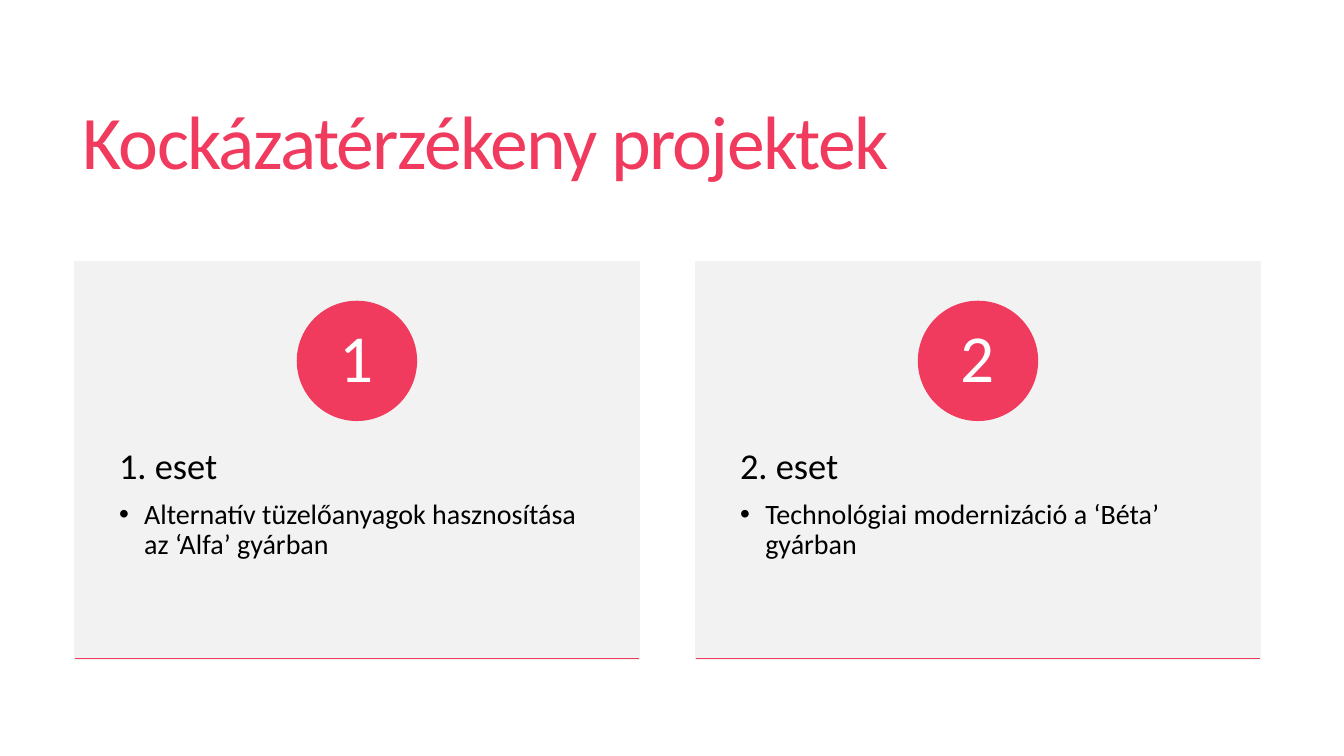
from lxml import etree
from pptx import Presentation
from pptx.dml.color import RGBColor
from pptx.enum.shapes import MSO_CONNECTOR, MSO_SHAPE
from pptx.enum.text import MSO_ANCHOR, MSO_AUTO_SIZE, PP_ALIGN
from pptx.oxml.ns import qn
from pptx.util import Inches, Pt

RECT, OVAL = MSO_SHAPE.RECTANGLE, MSO_SHAPE.OVAL
LINE = MSO_CONNECTOR.STRAIGHT
MIDDLE, TOP = MSO_ANCHOR.MIDDLE, MSO_ANCHOR.TOP
LEFT, CENTER = PP_ALIGN.LEFT, PP_ALIGN.CENTER
FONT, PINK, GREY, BLACK, WHITE = "Calibri", "F03B5E", "F2F2F2", "000000", "FFFFFF"

# Card grid: two columns sharing one row
X0, PITCH, WIDE = 0.74, 6.16, 5.6
Y0, HIGH = 2.6, 3.94
DISC = 1.18

CASES = [
    ("1", "1. eset", "Alternatív tüzelőanyagok hasznosítása az ‘Alfa’ gyárban"),
    ("2", "2. eset", "Technológiai modernizáció a ‘Béta’ gyárban"),
]


def color(code):
    return RGBColor.from_string(code)


def place(shape, x, y, w, h):
    shape.left, shape.top = Inches(x), Inches(y)
    shape.width, shape.height = Inches(w), Inches(h)


def setup(frame, anchor, side, edge):
    frame.word_wrap = True
    frame.auto_size = MSO_AUTO_SIZE.NONE
    frame.vertical_anchor = anchor
    frame.margin_left = frame.margin_right = Inches(side)
    frame.margin_top = frame.margin_bottom = Inches(edge)


def write(para, text, size, code, align=LEFT, lead=0.9, after=0):
    para.alignment = align
    para.line_spacing = lead
    para.space_before, para.space_after = Pt(0), Pt(after)
    run = para.add_run()
    run.text = text
    run.font.name, run.font.size = FONT, Pt(size)
    run.font.color.rgb = color(code)
    return run


def indent(para, hang, mark=None):
    props = para._p.get_or_add_pPr()
    props.set("marL", str(Inches(hang)))
    props.set("indent", str(-Inches(hang)))
    if mark:
        etree.SubElement(props, qn("a:buFont")).set("typeface", "Arial")
        etree.SubElement(props, qn("a:buChar")).set("char", mark)
    else:
        etree.SubElement(props, qn("a:buNone"))


def solid(slide, kind, x, y, w, h, code):
    shape = slide.shapes.add_shape(kind, Inches(x), Inches(y), Inches(w), Inches(h))
    shape.shadow.inherit = False
    shape.fill.solid()
    shape.fill.fore_color.rgb = shape.line.color.rgb = color(code)
    shape.line.width = Pt(1)
    return shape


def rule(slide, x, y, w):
    line = slide.shapes.add_connector(
        LINE, Inches(x), Inches(y), Inches(x + w), Inches(y))
    line.line.color.rgb = color(PINK)
    line.line.width = Pt(1)
    etree.SubElement(line._element.spPr, qn("a:effectLst"))


def head(slide, text):
    title = slide.shapes.title
    place(title, 0.72, 0.55, 11.78, 1.81)
    setup(title.text_frame, MIDDLE, 0.1, 0.05)
    run = write(title.text_frame.paragraphs[0], text, 54, PINK, lead=0.85)
    run.font._element.set("spc", "-120")


def card(slide, body, x, num, name, text):
    # Panel, sent behind the body placeholder
    panel = solid(slide, RECT, x, Y0, WIDE, HIGH, GREY)
    slide.shapes._spTree.insert(2, panel._element)

    # Case name and its bullet
    place(body, x, 4.09, WIDE, 2.36)
    frame = body.text_frame
    setup(frame, TOP, 0.44, 0.36)
    first = frame.paragraphs[0]
    write(first, name, 26, BLACK, after=9)
    indent(first, 0)
    item = frame.add_paragraph()
    item.level = 1
    write(item, text, 20, BLACK, after=3)
    indent(item, 0.25, "•")

    # Numbered disc, centred on the card
    disc = solid(slide, OVAL, x + (WIDE - DISC) / 2, 2.99, DISC, DISC, PINK)
    setup(disc.text_frame, MIDDLE, 0.09, 0.01)
    write(disc.text_frame.paragraphs[0], num, 48, WHITE, CENTER)

    # Bottom edge
    rule(slide, x, Y0 + HIGH - 0.01, WIDE)


def main():
    deck = Presentation()
    deck.slide_width, deck.slide_height = Inches(13.33), Inches(7.5)
    slide = deck.slides.add_slide(deck.slide_layouts[3])
    head(slide, "Kockázatérzékeny projektek")
    for col, case in enumerate(CASES):
        card(slide, slide.placeholders[col + 1], X0 + col * PITCH, *case)
    deck.save("out.pptx")


if __name__ == "__main__":
    main()
